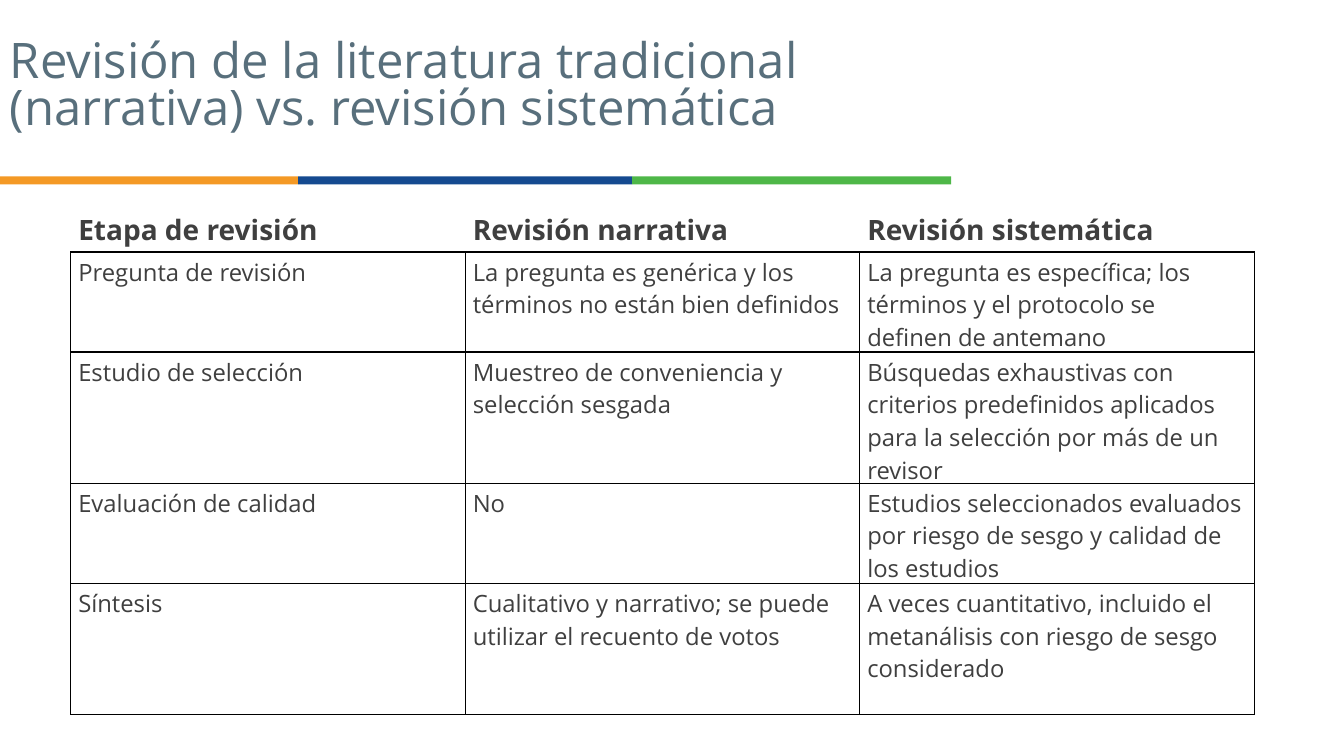
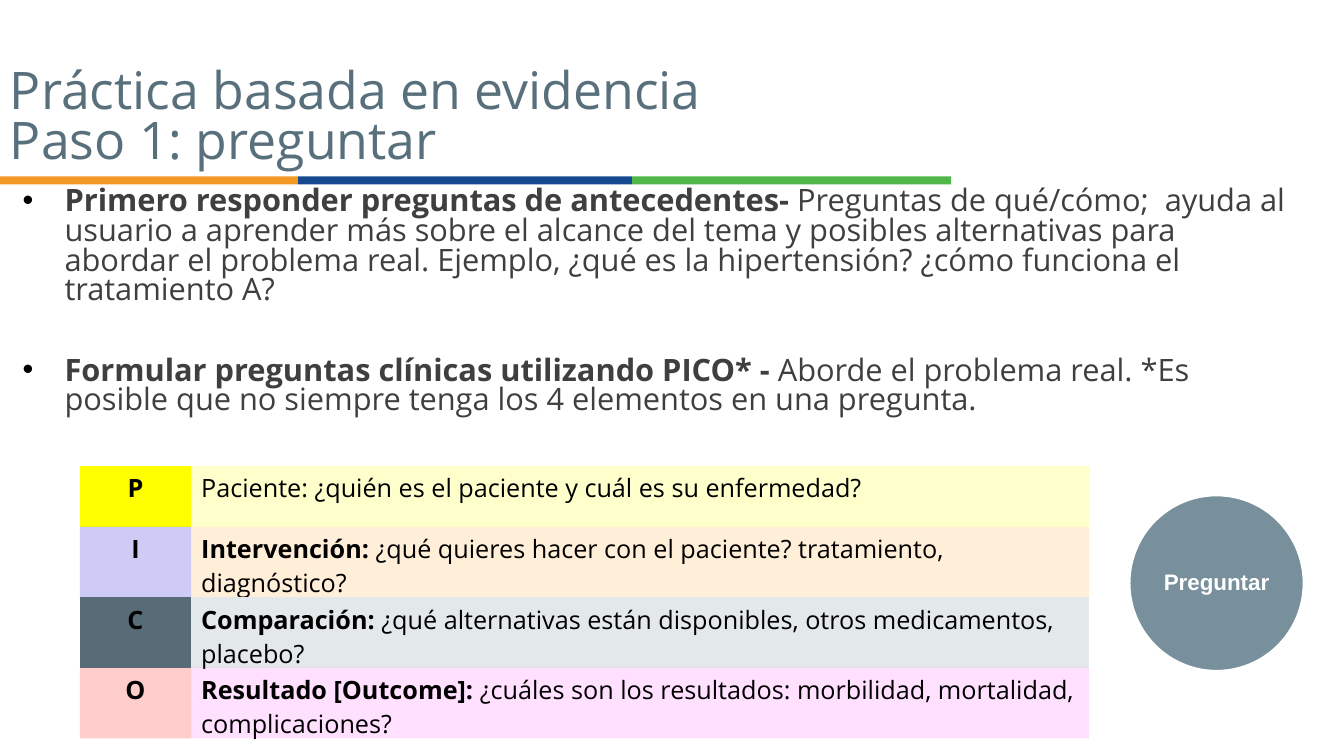
from lxml import etree
from pptx import Presentation
from pptx.dml.color import RGBColor as RGB
from pptx.enum.shapes import MSO_SHAPE as SHAPE
from pptx.enum.text import MSO_ANCHOR as ANCHOR, PP_ALIGN as ALIGN
from pptx.oxml.ns import qn
from pptx.util import Pt

C = {
    "title": "586F7C", "text": "3F3F3F", "black": "000000", "white": "FFFFFF",
    "orange": "F49925", "blue": "154A90", "green": "4EB748", "circle": "78909C",
    "yellow": "FFFF00", "cream": "FFFFCC", "indigo": "0B01D9", "amber": "FFAB40",
    "slate": "576C77", "mist": "E3E8EA", "red": "FF0000", "pink": "FF66FF",
}
FONT = "Open Sans"
NO_STYLE = "{2D5ABB26-0587-4C30-8999-92F81FD0307C}"
TIGHT = 0.8  # line spacing of titles and body


def add_runs(p, pieces, size, color, font=FONT):
    """Add (text, bold) pieces to a paragraph."""
    for text, bold in pieces:
        r = p.add_run()
        r.text = text
        r.font.name, r.font.size, r.font.bold = font, Pt(size), bold
        r.font.color.rgb = RGB.from_string(C[color])


def add_plain_table(s, left, top, widths, heights):
    """Add a table without style, banding or header row."""
    frame = s.shapes.add_table(len(heights), len(widths), Pt(left), Pt(top),
                               Pt(sum(widths)), Pt(sum(heights)))
    table = frame.table
    table.first_row = table.horz_banding = False
    table._tbl.tblPr.find(qn("a:tableStyleId")).text = NO_STYLE
    for col, width in zip(table.columns, widths):
        col.width = Pt(width)
    for row, height in zip(table.rows, heights):
        row.height = Pt(height)
    return table


prs = Presentation()
prs.slide_width, prs.slide_height = Pt(960), Pt(540)

# Shared frame: tricolour band and title
titles = [
    (["Revisión de la literatura tradicional", "(narrativa) vs. revisión sistemática"], 20, 35),
    (["Práctica basada en evidencia", "Paso 1: preguntar"], 43, 37),
]
band = [("orange", 213), ("blue", 238.5), ("green", 228)]
slides = []
for lines, top, size in titles:
    s = prs.slides.add_slide(prs.slide_layouts[6])
    slides.append(s)
    x = 0
    for color, width in band:
        sp = s.shapes.add_shape(SHAPE.RECTANGLE, Pt(x), Pt(126), Pt(width), Pt(5.8))
        sp.shadow.inherit = False
        sp.fill.solid()
        sp.fill.fore_color.rgb = RGB.from_string(C[color])
        sp.line.fill.background()
        x += width
    tf = s.shapes.add_textbox(0, Pt(top), Pt(757), Pt(85)).text_frame
    tf.word_wrap, tf.vertical_anchor = True, ANCHOR.MIDDLE
    p = tf.paragraphs[0]
    p.line_spacing = TIGHT
    for i, line in enumerate(lines):
        if i:
            p.add_line_break()
        add_runs(p, [(line, False)], size, "title")
compare, ask = slides

# Slide 1: comparison table
rows = [
    ("Etapa de revisión", "Revisión narrativa", "Revisión sistemática"),
    ("Pregunta de revisión",
     "La pregunta es genérica y los términos no están bien definidos",
     "La pregunta es específica; los términos y el protocolo se definen de antemano"),
    ("Estudio de selección",
     "Muestreo de conveniencia y selección sesgada",
     "Búsquedas exhaustivas con criterios predefinidos aplicados para la selección "
     "por más de un revisor"),
    ("Evaluación de calidad",
     "No",
     "Estudios seleccionados evaluados por riesgo de sesgo y calidad de los estudios"),
    ("Síntesis",
     "Cualitativo y narrativo; se puede utilizar el recuento de votos",
     "A veces cuantitativo, incluido el metanálisis con riesgo de sesgo considerado"),
]
table = add_plain_table(compare, 50.5, 147.6, [281.8] * 3, [32.4, 71.5, 93.6, 71.5, 93.6])
for i, row in enumerate(rows):
    header = i == 0
    for j, text in enumerate(row):
        cell = table.cell(i, j)
        cell.margin_left = cell.margin_right = Pt(5.4)
        cell.margin_top = cell.margin_bottom = Pt(2.7)
        add_runs(cell.text_frame.paragraphs[0], [(text, header)], 20 if header else 17, "text")
        # Header cells have only a bottom border
        tc_pr = cell._tc.get_or_add_tcPr()
        for side in ["B"] if header else ["L", "R", "T", "B"]:
            ln = etree.SubElement(tc_pr, qn("a:ln" + side), w=str(Pt(1)))
            fill = etree.SubElement(ln, qn("a:solidFill"))
            etree.SubElement(fill, qn("a:srgbClr"), val=C["black"])
        cell.fill.background()

# Slide 2: bulleted text
bullets = [
    [("Primero responder preguntas de antecedentes- ", True),
     ("Preguntas de qué/cómo;  ayuda al usuario a aprender más sobre el alcance del tema "
      "y posibles alternativas para abordar el problema real. Ejemplo, ¿qué es la "
      "hipertensión? ¿cómo funciona el tratamiento A?", False)],
    [("Formular preguntas clínicas utilizando PICO* - ", True),
     ("Aborde el problema real. *Es posible que no siempre tenga los 4 elementos en una "
      "pregunta.", False)],
]
tf = ask.shapes.add_textbox(Pt(3), Pt(131), Pt(929), Pt(200)).text_frame
tf.word_wrap = True
for i, pieces in enumerate(bullets):
    p = tf.add_paragraph() if i else tf.paragraphs[0]
    p.line_spacing = TIGHT
    p.space_before = Pt(36.5 if i else 0)
    p_pr = p._p.get_or_add_pPr()
    p_pr.set("marL", str(Pt(36)))
    p_pr.set("indent", str(Pt(-30)))
    bu_clr = etree.SubElement(p_pr, qn("a:buClr"))
    etree.SubElement(bu_clr, qn("a:srgbClr"), val=C["black"])
    etree.SubElement(p_pr, qn("a:buFont"), typeface="Arial")
    etree.SubElement(p_pr, qn("a:buChar"), char="•")
    add_runs(p, pieces, 22, "text")

# Slide 2: PICO table; each fill is a colour and its opacity in percent
pico = [
    ("P", ("yellow", 100), ("cream", 100),
     [("Paciente: ¿quién es el paciente y cuál es su enfermedad?", False)]),
    ("I", ("indigo", 20), ("amber", 20),
     [("Intervención: ", True),
      ("¿qué quieres hacer con el paciente? tratamiento, diagnóstico?", False)]),
    ("C", ("slate", 100), ("mist", 100),
     [("Comparación: ", True),
      ("¿qué alternativas están disponibles, otros medicamentos, placebo?", False)]),
    ("O", ("red", 20), ("pink", 20),
     [("Resultado [Outcome]: ", True),
      ("¿cuáles son los resultados: morbilidad, mortalidad, complicaciones?", False)]),
]
table = add_plain_table(ask, 57, 332.6, [79.5, 641.5], [43.5, 48.4, 48.4, 48.4])
for i, (letter, letter_fill, text_fill, pieces) in enumerate(pico):
    cells = [([(letter, True)], letter_fill, ALIGN.CENTER), (pieces, text_fill, ALIGN.LEFT)]
    for j, (content, (color, opacity), align) in enumerate(cells):
        cell = table.cell(i, j)
        p = cell.text_frame.paragraphs[0]
        p.alignment = align
        add_runs(p, content, 18, "black")
        cell.fill.solid()
        cell.fill.fore_color.rgb = RGB.from_string(C[color])
        if opacity < 100:
            clr = cell._tc.tcPr.find(".//" + qn("a:srgbClr"))
            etree.SubElement(clr, qn("a:alpha"), val=str(opacity * 1000))

# Slide 2: step circle
sp = ask.shapes.add_shape(SHAPE.OVAL, Pt(806.5), Pt(353.5), Pt(125), Pt(126))
sp.shadow.inherit = False
sp.fill.solid()
sp.fill.fore_color.rgb = RGB.from_string(C["circle"])
sp.line.color.rgb = RGB.from_string(C["white"])
sp.line.width = Pt(2)
tf = sp.text_frame
tf.word_wrap, tf.vertical_anchor = True, ANCHOR.MIDDLE
tf.margin_left = tf.margin_right = tf.margin_top = tf.margin_bottom = Pt(1.5)
p = tf.paragraphs[0]
p.alignment, p.line_spacing = ALIGN.CENTER, 0.9
add_runs(p, [("Preguntar", True)], 16, "white", "Arial")

prs.save("out.pptx")
